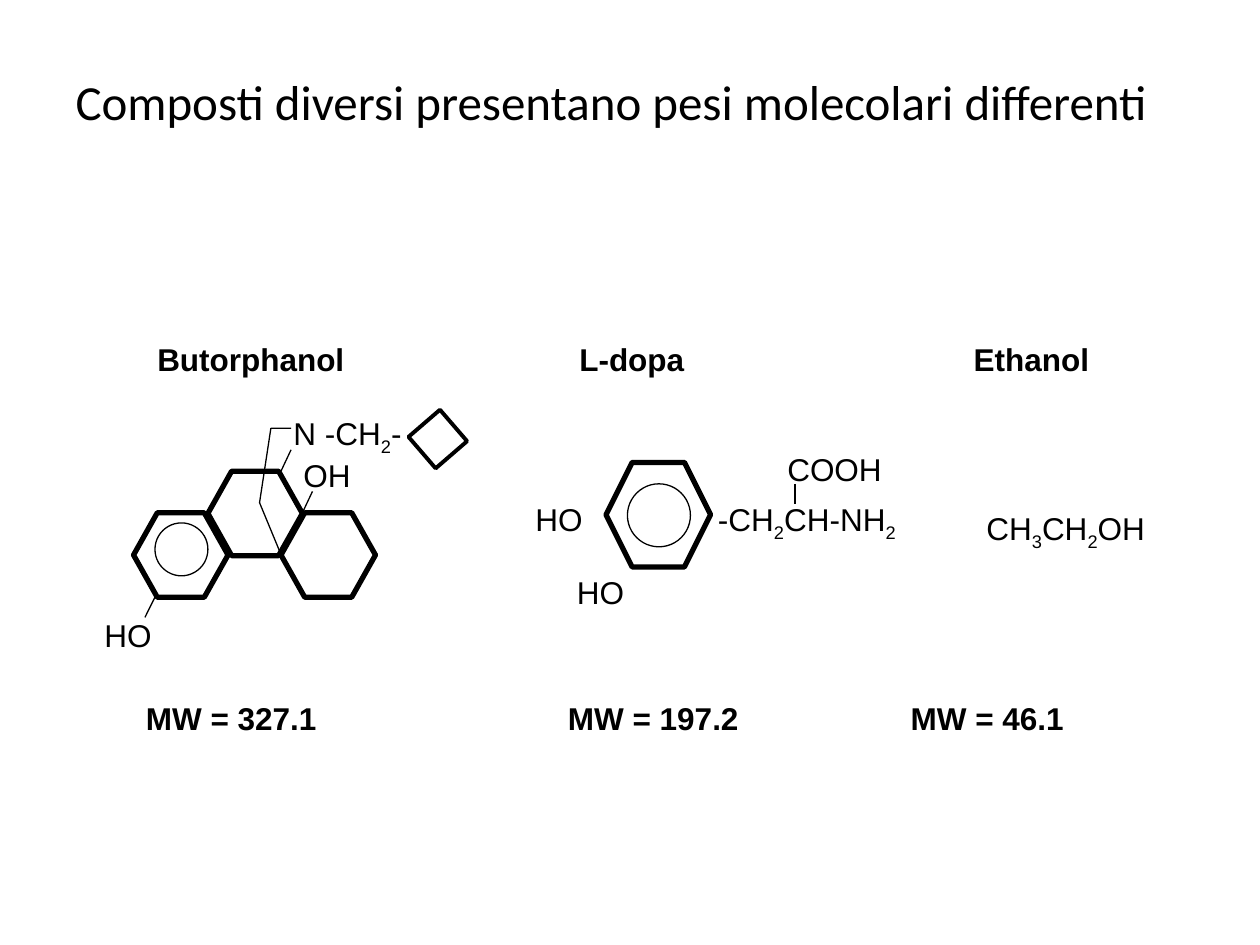
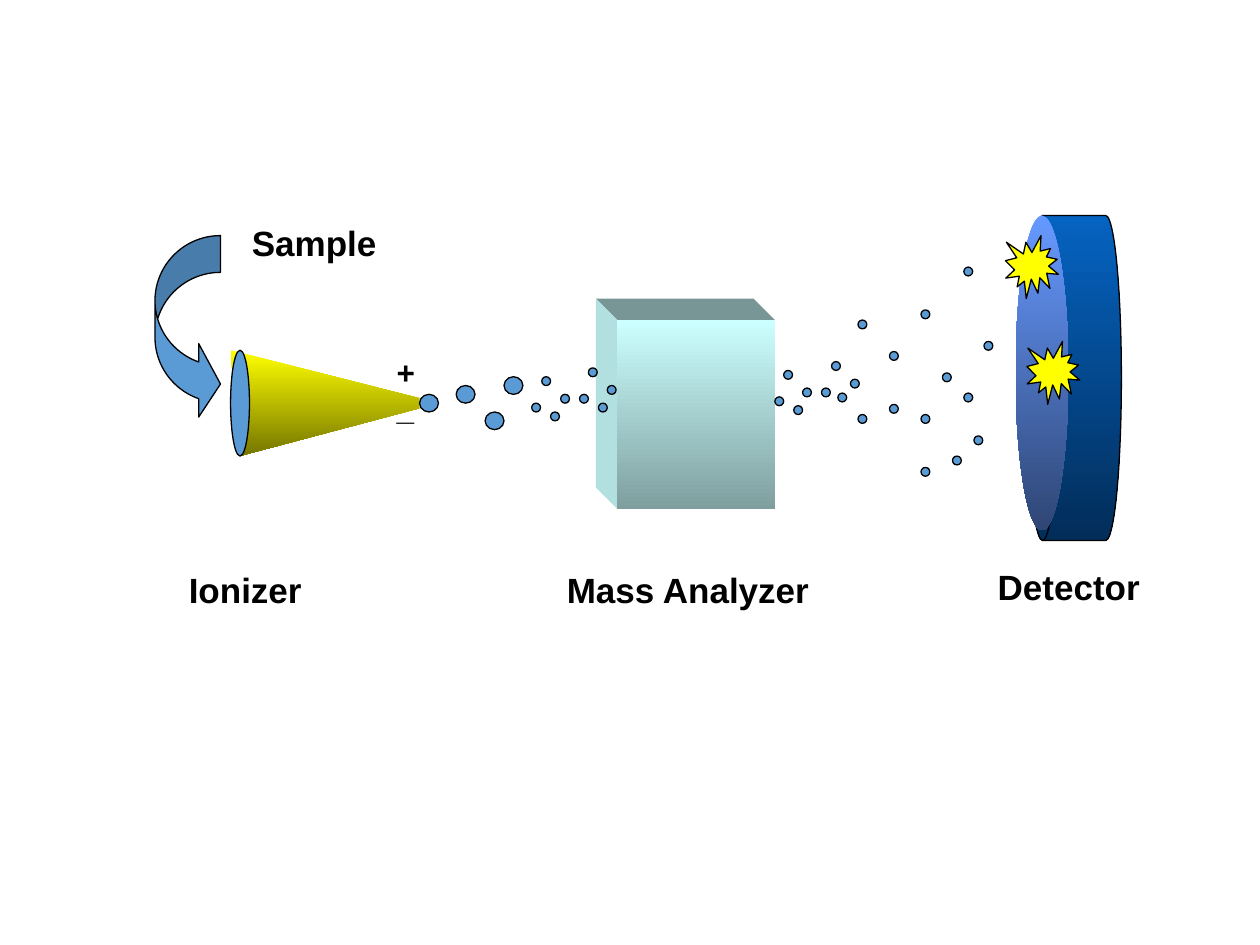
from dataclasses import dataclass
from itertools import groupby
from typing import Optional, Union

from lxml.etree import SubElement
from pptx import Presentation
from pptx.dml.color import RGBColor
from pptx.enum.shapes import MSO_CONNECTOR, MSO_SHAPE
from pptx.enum.text import MSO_ANCHOR, MSO_AUTO_SIZE, PP_ALIGN
from pptx.oxml.ns import qn
from pptx.util import Inches, Pt

COLORS = {
    "ink": "000000",
    "white": "FFFFFF",
    "ion": "5B9BD5",
    "flash": "FFFF00",
    "analyzer_top": "799696",
    "analyzer_side": "B2DFDF",
}
GRADIENTS = {
    "drum": ("0563C1", "022D59"),
    "analyzer": ("CCFFFF", "7F9F9F"),
    "cone": ("FFFF00", "757500"),
    "drum_face": ("6699FF", "2F4675"),
}
FORMATS = {
    "title": {"name": "Calibri", "size": Pt(28), "bold": False},
    "formula": {"name": "Arial", "size": Pt(18), "bold": False},
    "strong": {"name": "Arial", "size": Pt(18), "bold": True},
    "part": {"name": "Arial", "size": Pt(20), "bold": True},
}
THIN = 0.75
BOND = 3
TITLE_LAYOUT, BLANK_LAYOUT = 5, 6

Point = tuple[float, float]


@dataclass
class Label:
    text: str
    left: float
    top: float
    width: float
    height: float = 0.4
    style: str = "formula"
    tabs: tuple[float, ...] = ()


@dataclass
class Figure:
    kind: MSO_SHAPE
    left: float
    top: float
    width: float
    height: float
    fill: Optional[str] = None
    line: Optional[float] = THIN
    adjustments: tuple[float, ...] = ()
    rotation: float = 0
    flipped: bool = False


@dataclass
class Outline:
    points: list[Point]
    fill: Optional[str] = None
    line: Optional[float] = None
    closed: bool = True


@dataclass
class Bond:
    start: Point
    end: Point


Element = Union[Label, Figure, Outline, Bond]


def color(name: str) -> RGBColor:
    return RGBColor.from_string(COLORS[name])


def format_span(span, style: str) -> None:
    for name, value in FORMATS[style].items():
        setattr(span.font, name, value)
    span.font.color.rgb = color("ink")


def paint(shape, fill: Optional[str], line: Optional[float]) -> None:
    shape.shadow.inherit = False
    if fill in GRADIENTS:
        shape.fill.gradient()
        shape.fill.gradient_angle = 270
        for stop, shade in zip(shape.fill.gradient_stops, GRADIENTS[fill]):
            stop.color.rgb = RGBColor.from_string(shade)
    elif fill:
        shape.fill.solid()
        shape.fill.fore_color.rgb = color(fill)
    else:
        shape.fill.background()
    if line:
        shape.line.width = Pt(line)
        shape.line.color.rgb = color("ink")
    else:
        shape.line.fill.background()


def add_label(shapes, label: Label) -> None:
    place = (label.left, label.top, label.width, label.height)
    box = shapes.add_textbox(*map(Inches, place))
    frame = box.text_frame
    frame.word_wrap = bool(label.tabs)
    frame.auto_size = MSO_AUTO_SIZE.SHAPE_TO_FIT_TEXT
    para = frame.paragraphs[0]
    if label.tabs:
        tab_list = SubElement(para._p.get_or_add_pPr(), qn("a:tabLst"))
        for position in label.tabs:
            SubElement(tab_list, qn("a:tab"), pos=str(Inches(position)), algn="l")
    if label.style != "formula":
        pieces = [(False, label.text)]
    else:
        pieces = [(low, "".join(part)) for low, part in groupby(label.text, str.isdigit)]
    for subscript, text in pieces:
        span = para.add_run()
        span.text = text
        format_span(span, label.style)
        if subscript:
            span._r.get_or_add_rPr().set("baseline", "-25000")


def add_figure(shapes, figure: Figure) -> None:
    place = (figure.left, figure.top, figure.width, figure.height)
    shape = shapes.add_shape(figure.kind, *map(Inches, place))
    for index, value in enumerate(figure.adjustments):
        shape.adjustments[index] = value
    shape.rotation = figure.rotation
    if figure.flipped:
        shape._element.spPr.xfrm.set("flipH", "1")
    paint(shape, figure.fill, figure.line)


def add_outline(shapes, outline: Outline) -> None:
    points = [(Inches(x), Inches(y)) for x, y in outline.points]
    builder = shapes.build_freeform(*points[0])
    builder.add_line_segments(points[1:], close=outline.closed)
    paint(builder.convert_to_shape(), outline.fill, outline.line)


def add_bond(shapes, bond: Bond) -> None:
    ends = map(Inches, bond.start + bond.end)
    line = shapes.add_connector(MSO_CONNECTOR.STRAIGHT, *ends)
    line.line.width = Pt(THIN)
    line.line.color.rgb = color("ink")
    SubElement(line._element.spPr, qn("a:effectLst"))


PAINTERS = {Label: add_label, Figure: add_figure, Outline: add_outline, Bond: add_bond}


def draw(shapes, elements: list[Element]) -> None:
    for element in elements:
        PAINTERS[type(element)](shapes, element)


def ring(left: float, top: float, width: float, height: float, slant: float) -> Figure:
    return Figure(MSO_SHAPE.HEXAGON, left, top, width, height, line=BOND,
                  adjustments=(slant, 1.155))


def circle(left: float, top: float, size: float) -> Figure:
    return Figure(MSO_SHAPE.OVAL, left, top, size, size)


def ions(places: list[Point], width: float = 0.07, height: float = 0.07) -> list[Element]:
    return [Figure(MSO_SHAPE.OVAL, x, y, width, height, "ion") for x, y in places]


BUTORPHANOL = [
    *[ring(left, top, 0.75, 0.67, 0.281)
      for left, top in ((1.06, 4.07), (1.65, 3.74), (2.23, 4.07))],
    circle(1.23, 4.15, 0.42),
    Outline([(2.23, 4.4), (2.06, 3.99), (2.15, 3.4), (2.31, 3.4)], line=THIN, closed=False),
    Label("N", 2.23, 3.24, 0.38),
    Label("OH", 2.31, 3.57, 0.58),
    Label("HO", 0.73, 4.84, 0.58),
    Bond((2.31, 3.57), (2.23, 3.74)),
    Bond((2.48, 3.9), (2.4, 4.07)),
    Bond((1.23, 4.74), (1.15, 4.9)),
    Label("-CH2-", 2.48, 3.24, 0.82),
    Figure(MSO_SHAPE.RECTANGLE, 3.31, 3.32, 0.33, 0.33, line=2.25, rotation=49.2),
]
L_DOPA = [
    ring(4.81, 3.67, 0.83, 0.83, 0.25),
    circle(4.98, 3.84, 0.5),
    Label("-CH2CH-NH2", 5.6, 3.92, 1.64),
    Label("COOH", 6.15, 3.52, 0.95),
    Bond((6.31, 3.84), (6.31, 4)),
    Label("HO", 4.15, 3.92, 0.58),
    Label("HO", 4.48, 4.5, 0.58),
]
COMPOUND_ROWS = [
    Label("Butorphanol\tL-dopa\tEthanol", 1.15, 2.65, 8.07, 0.5, "strong", (3.35, 6.48)),
    Label("MW = 327.1\tMW = 197.2\tMW = 46.1", 1.06, 5.5, 7.56, 0.4, "strong", (3.35, 6.07)),
]

INCOMING_IONS = [
    (4.37, 3.27), (4.3, 2.99), (4.22, 3.2), (4.45, 3.13),
    (4.75, 3.2), (4.67, 2.92), (4.6, 3.13), (4.82, 3.06),
]
SORTED_IONS = [
    (6.3, 3.22), (6.22, 2.94), (6.15, 3.15), (6.37, 3.08), (6.65, 3.12), (6.6, 2.87),
    (6.52, 3.08), (6.75, 3.01), (7.06, 2.79), (7.65, 2.12), (7.56, 3.62), (7.48, 2.96),
    (7.31, 2.46), (6.81, 3.29), (7.06, 3.21), (7.31, 3.71), (7.31, 3.29), (7.65, 3.12),
    (7.73, 3.46), (7.81, 2.71), (6.81, 2.54),
]
DROPLETS = [(4, 2.99), (3.85, 3.27), (3.62, 3.06)]


def analyzer(left: float, top: float, width: float, height: float, depth: float) -> list[Element]:
    right, bottom = left + width, top + height
    back_left, back_top = left - depth, top - depth
    return [
        Outline([(back_left, back_top), (right - depth, back_top), (right, top), (left, top)],
                "analyzer_top"),
        Outline([(back_left, back_top), (left, top), (left, bottom), (back_left, bottom - depth)],
                "analyzer_side"),
        Figure(MSO_SHAPE.RECTANGLE, left, top, width, height, "analyzer", None),
    ]


SPECTROMETER = [
    Figure(MSO_SHAPE.FLOWCHART_DIRECT_ACCESS_STORAGE, 8.15, 1.71, 0.75, 2.58, "drum", flipped=True),
    *analyzer(4.9, 2.54, 1.25, 1.5, 0.17),
    Outline([(1.83, 2.78), (3.48, 3.2), (1.9, 3.62)], "cone"),
]
IONIZER = [
    *ions(DROPLETS, 0.15, 0.14),
    Figure(MSO_SHAPE.OVAL, 1.83, 2.78, 0.15, 0.84, "ion"),
    Figure(MSO_SHAPE.RECTANGLE, 3.33, 2.85, 0.15, 0.7, "white", None),
    *ions([(3.33, 3.13)], 0.15, 0.14),
    Figure(MSO_SHAPE.CURVED_RIGHT_ARROW, 1.23, 1.87, 0.52, 1.47, "ion",
           adjustments=(0.561, 1.122, 0.333)),
    Label("+", 3.05, 2.75, 0.35, style="strong"),
    Label("_", 3.05, 3.04, 0.34, style="strong"),
]
DETECTOR = [
    *ions(SORTED_IONS),
    Figure(MSO_SHAPE.OVAL, 8.06, 1.71, 0.42, 2.5, "drum_face", None),
    *[Figure(MSO_SHAPE.EXPLOSION1, left, top, 0.42, 0.5, "flash")
      for left, top in ((7.98, 1.87), (8.15, 2.71))],
]
PART_LABELS = [
    Label(text, left, top, width, 0.43, "part")
    for text, left, top, width in (
        ("Ionizer", 1.4, 4.46, 1.1),
        ("Sample", 1.9, 1.71, 1.19),
        ("Mass Analyzer", 4.4, 4.46, 2.13),
        ("Detector", 7.82, 4.44, 1.33),
    )
]


def set_title(page, text: str) -> None:
    title = page.shapes.title
    place = {"left": 0.5, "top": 0.52, "width": 8.71, "height": 1.04}
    for name, value in place.items():
        setattr(title, name, Inches(value))
    frame = title.text_frame
    frame.auto_size = MSO_AUTO_SIZE.NONE
    frame.vertical_anchor = MSO_ANCHOR.TOP
    para = frame.paragraphs[0]
    para.alignment = PP_ALIGN.LEFT
    span = para.add_run()
    span.text = text
    format_span(span, "title")


def build_compounds(deck) -> None:
    page = deck.slides.add_slide(deck.slide_layouts[TITLE_LAYOUT])
    set_title(page, "Composti diversi presentano pesi molecolari differenti")
    draw(page.shapes, [Label("CH3CH2OH", 7.73, 3.99, 1.48)])
    for molecule in (BUTORPHANOL, L_DOPA):
        draw(page.shapes.add_group_shape().shapes, molecule)
    draw(page.shapes, COMPOUND_ROWS)


def build_spectrometer(deck) -> None:
    page = deck.slides.add_slide(deck.slide_layouts[BLANK_LAYOUT])
    draw(page.shapes, SPECTROMETER)
    draw(page.shapes.add_group_shape().shapes, ions(INCOMING_IONS))
    draw(page.shapes, IONIZER + DETECTOR + PART_LABELS)


def main() -> None:
    deck = Presentation()
    deck.slide_width, deck.slide_height = Inches(10), Inches(7.5)
    build_compounds(deck)
    build_spectrometer(deck)
    deck.save("out.pptx")


if __name__ == "__main__":
    main()
